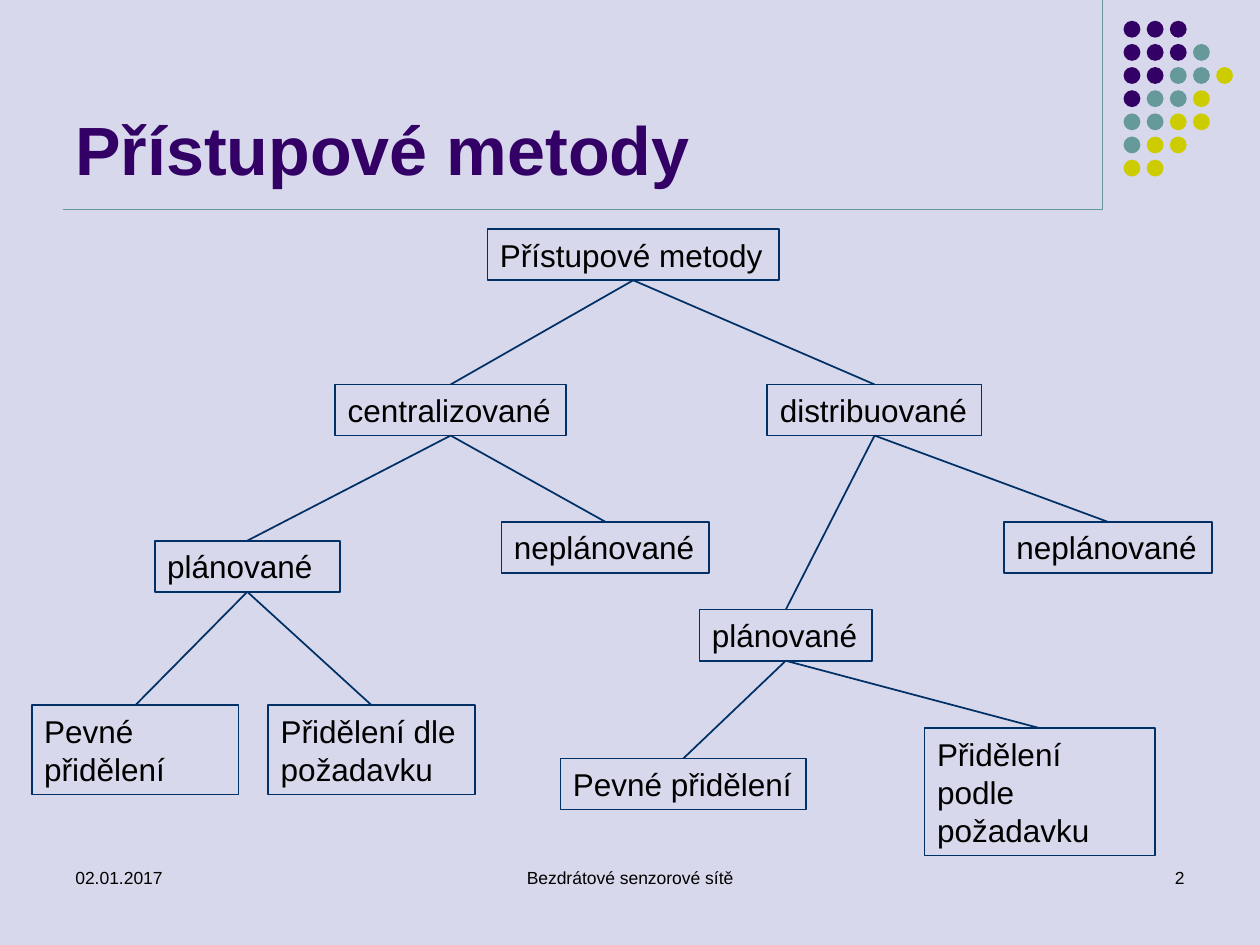
from dataclasses import dataclass

import pptx
import pptx.dml.color
import pptx.enum.shapes
import pptx.enum.text
import pptx.oxml
import pptx.oxml.ns
import pptx.util

Cm = pptx.util.Cm
Pt = pptx.util.Pt
Align = pptx.enum.text.PP_ALIGN
Anchor = pptx.enum.text.MSO_ANCHOR

BACKGROUND, PURPLE, TEAL, YELLOW = "D8D8EC", "330066", "669999", "CCCC00"
NAVY, BLACK = "003065", "000000"
DOT_COLORS = {"P": PURPLE, "T": TEAL, "Y": YELLOW}
DOT_ROWS = ["PPP", "PPPT", "PPTTY", "PTTY", "TTYY", "TYY", "YY"]
DOT_LEFT, DOT_TOP, DOT_SIZE, DOT_PITCH = 22.65, 0.42, 0.34, 2.8 / 6
RULE_X, RULE_Y = 22.23, 4.23


@dataclass(frozen=True)
class Method:
    key: str
    parent: str
    label: str
    left: float
    top: float
    width: float
    height: float = 1.03
    wrap: bool = False


METHODS = [
    Method("root", "", "Přístupové metody", 9.83, 4.62, 5.87),
    Method("central", "root", "centralizované", 6.76, 7.75, 4.65),
    Method("distributed", "root", "distribuované", 15.47, 7.75, 4.32),
    Method("distributed unplanned", "distributed", "neplánované", 20.24, 10.52, 4.19),
    Method("distributed planned", "distributed", "plánované", 14.1, 12.29, 3.48),
    Method("distributed fixed", "distributed planned", "Pevné přidělení", 11.3, 15.29, 4.95),
    Method("distributed on demand", "distributed planned", "Přidělení podle\npožadavku",
           18.64, 14.68, 4.65, 2.57, True),
    Method("central unplanned", "central", "neplánované", 10.11, 10.52, 4.19, wrap=True),
    Method("central planned", "central", "plánované", 3.12, 10.9, 3.73, wrap=True),
    Method("central fixed", "central planned", "Pevné přidělení", 0.64, 14.22, 4.17, 1.8, True),
    Method("central on demand", "central planned", "Přidělení dle požadavku",
           5.41, 14.22, 4.17, 1.8, True),
]


def paint(color_owner, color: str) -> None:
    if hasattr(color_owner, "solid"):
        color_owner.solid()
        color_owner = color_owner.fore_color
    color_owner.rgb = pptx.dml.color.RGBColor.from_string(color)


def write(holder, text: str, *, size: float, color: str = BLACK, bold: bool = False,
          align=Align.LEFT, anchor=Anchor.TOP, wrap: bool = True) -> None:
    frame = holder.text_frame
    frame.word_wrap = wrap
    frame.vertical_anchor = anchor
    frame.text = text
    for paragraph in frame.paragraphs:
        paragraph.alignment = align
        font = paragraph.runs[0].font
        font.name, font.size, font.bold = "Arial", Pt(size), bold
        paint(font.color, color)


def add_text(slide, text: str, left: float, top: float, width: float, height: float,
             **style) -> None:
    write(slide.shapes.add_textbox(Cm(left), Cm(top), Cm(width), Cm(height)), text, **style)


def add_line(slide, color: str, weight: float, start=(0, 0), end=(0, 0)):
    line = slide.shapes.add_connector(
        pptx.enum.shapes.MSO_CONNECTOR.STRAIGHT, *map(Cm, start + end))
    paint(line.line.fill, color)
    line.line.width = Pt(weight)
    properties = line._element.spPr
    properties.append(pptx.oxml.parse_xml(
        f"<a:effectLst {pptx.oxml.ns.nsdecls('a')}/>"))
    return line


def add_dot(slide, row: int, column: int, color: str) -> None:
    dot = slide.shapes.add_shape(
        pptx.enum.shapes.MSO_SHAPE.OVAL,
        Cm(DOT_LEFT + column * DOT_PITCH), Cm(DOT_TOP + row * DOT_PITCH),
        Cm(DOT_SIZE), Cm(DOT_SIZE))
    dot.shadow.inherit = False
    paint(dot.fill, color)
    dot.line.fill.background()


def add_method(slide, method: Method):
    box = slide.shapes.add_shape(
        pptx.enum.shapes.MSO_SHAPE.RECTANGLE,
        Cm(method.left), Cm(method.top), Cm(method.width), Cm(method.height))
    box.shadow.inherit = False
    box.fill.background()
    paint(box.line.fill, NAVY)
    box.line.width = Pt(1)
    write(box, method.label, size=18, anchor=Anchor.MIDDLE, wrap=method.wrap)
    box.text_frame.auto_size = pptx.enum.text.MSO_AUTO_SIZE.SHAPE_TO_FIT_TEXT
    return box


def add_branch(slide, parent, child) -> None:
    branch = add_line(slide, NAVY, 1)
    branch.begin_connect(parent, 2)
    branch.end_connect(child, 0)


def main() -> None:
    deck = pptx.Presentation()
    deck.slide_width, deck.slide_height = Cm(25.4), Cm(19.05)
    slide = deck.slides.add_slide(deck.slide_layouts[6])
    paint(slide.background.fill, BACKGROUND)

    add_line(slide, TEAL, 0.75, (RULE_X, 0), (RULE_X, RULE_Y))
    for row, colors in enumerate(DOT_ROWS):
        for column, letter in enumerate(colors):
            add_dot(slide, row, column, DOT_COLORS[letter])
    add_line(slide, TEAL, 0.75, (1.27, RULE_Y), (RULE_X, RULE_Y))

    add_text(slide, "Přístupové metody", 1.27, 0.33, 20.96, 3.6,
             size=39, color=PURPLE, bold=True, anchor=Anchor.BOTTOM)
    add_text(slide, "02.01.2017", 1.27, 17.35, 5.93, 1.27, size=10)
    add_text(slide, "Bezdrátové senzorové sítě", 8.68, 17.35, 8.04, 1.27,
             size=10, align=Align.CENTER)
    add_text(slide, "2", 18.2, 17.35, 5.93, 1.27, size=10, align=Align.RIGHT)

    boxes = {method.key: add_method(slide, method) for method in METHODS}
    for method in METHODS:
        if method.parent:
            add_branch(slide, boxes[method.parent], boxes[method.key])

    deck.save("out.pptx")


if __name__ == "__main__":
    main()
